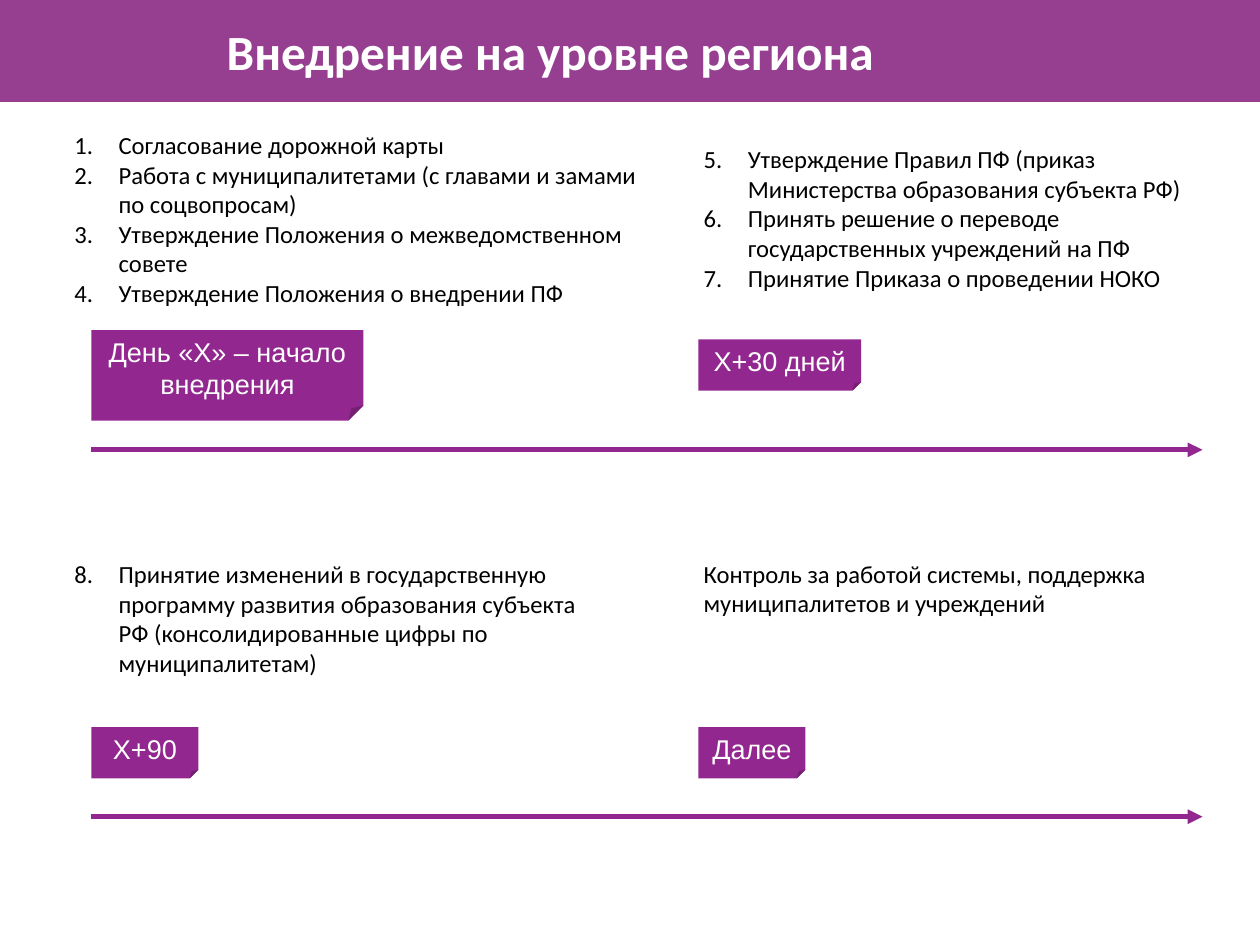
from pptx import Presentation
from pptx.dml.color import RGBColor
from pptx.enum.shapes import MSO_CONNECTOR as CONN, MSO_SHAPE as SHAPE
from pptx.enum.text import MSO_ANCHOR as ANCHOR, MSO_AUTO_SIZE as AUTO, PP_ALIGN as ALIGN
from pptx.oxml.ns import qn
from pptx.util import Cm, Pt
from lxml import etree

PURPLE = "92278F"
LEFT, RIGHT = 2.62, 20.02


def color(fmt, hex_value):
    if hasattr(fmt, "solid"):
        fmt.solid()
        fmt = fmt.fore_color
    fmt.rgb = RGBColor.from_string(hex_value)


def write(sp, lines, size=20, font="Calibri", ink="000000", bold=False,
          align=ALIGN.LEFT, inset=0.15, start=None):
    tf = sp.text_frame
    tf.word_wrap, tf.auto_size = True, AUTO.NONE
    tf.vertical_anchor = ANCHOR.MIDDLE
    tf.margin_left = tf.margin_right = tf.margin_top = tf.margin_bottom = Cm(inset)
    for i, line in enumerate(lines):
        p = tf.paragraphs[0] if i == 0 else tf.add_paragraph()
        pPr = p._p.get_or_add_pPr()
        indent = Cm(1.27) if start else 0
        pPr.set("marL", str(int(indent)))
        pPr.set("indent", str(-int(indent)))
        if start:
            bu = etree.SubElement(pPr, qn("a:buAutoNum"), type="arabicPeriod")
            if start > 1:
                bu.set("startAt", str(start))
        else:
            etree.SubElement(pPr, qn("a:buNone"))
        p.alignment, p.space_before = align, Pt(0)
        r = p.add_run()
        r.text = line
        r.font.size, r.font.name, r.font.bold = Pt(size), font, bold
        color(r.font.color, ink)


prs = Presentation()
prs.slide_width, prs.slide_height = Cm(36.12), Cm(27.1)
s = prs.slides.add_slide(prs.slide_layouts[4])  # title and four bodies

# Title on its band
band = s.shapes.add_shape(SHAPE.RECTANGLE, 0, 0, Cm(36.55), Cm(2.92))
band.shadow.inherit = False
color(band.fill, "963F90")
band.line.fill.background()
title = s.shapes.title
title._element.addprevious(band._element)
title.left, title.top, title.width, title.height = Cm(6.25), Cm(0.48), Cm(21.87), Cm(1.96)
write(title, ["Внедрение на уровне региона"], size=40, ink="FFFFFF", bold=True, inset=0.25)

# Steps: placeholder, left, top, width, height, first number, lines
steps = [
    (1, 1.98, 3.56, 16.51, 5.41, 1, [
        "Согласование дорожной карты",
        "Работа с муниципалитетами (с главами и замами по соцвопросам)",
        "Утверждение Положения о межведомственном совете",
        "Утверждение Положения о внедрении ПФ"]),
    (2, RIGHT, 3.12, 14.48, 6.27, 5, [
        "Утверждение Правил ПФ (приказ Министерства образования субъекта РФ)",
        "Принять решение о переводе государственных учреждений на ПФ",
        "Принятие Приказа о проведении НОКО"]),
    (3, 1.98, 15.44, 15.54, 4.57, 8, [
        "Принятие изменений в государственную программу развития образования "
        "субъекта РФ (консолидированные цифры по муниципалитетам)"]),
    (4, RIGHT, 15.44, 14.12, 2.84, None, [
        "Контроль за работой системы, поддержка муниципалитетов и учреждений"]),
]
for idx, x, y, w, h, start, lines in steps:
    sp = s.placeholders[idx]
    sp.left, sp.top, sp.width, sp.height = Cm(x), Cm(y), Cm(w), Cm(h)
    write(sp, lines, start=start)

# Timeline arrows
for y in (12.9, 23.42):
    arrow = s.shapes.add_connector(CONN.STRAIGHT, Cm(LEFT), Cm(y), Cm(34.47), Cm(y))
    arrow.line.width = Pt(4)
    color(arrow.line.fill, PURPLE)
    etree.SubElement(arrow.line._get_or_add_ln(), qn("a:tailEnd"), type="triangle")
    etree.SubElement(arrow._element.spPr, qn("a:effectLst"))

# Date flags
flags = [
    (LEFT, 9.47, 7.8, 2.59, "День «Х» – начало внедрения"),
    (RIGHT, 9.73, 4.67, 1.47, "Х+30 дней"),
    (LEFT, 20.85, 3.07, 1.47, "Х+90"),
    (RIGHT, 20.85, 3.07, 1.47, "Далее"),
]
for x, y, w, h, label in flags:
    flag = s.shapes.add_shape(SHAPE.FOLDED_CORNER, Cm(x), Cm(y), Cm(w), Cm(h))
    flag.shadow.inherit = False
    color(flag.fill, PURPLE)
    flag.line.fill.background()
    write(flag, [label], size=22, font="Arial", ink="FFFFFF", align=ALIGN.CENTER)

prs.save("out.pptx")
